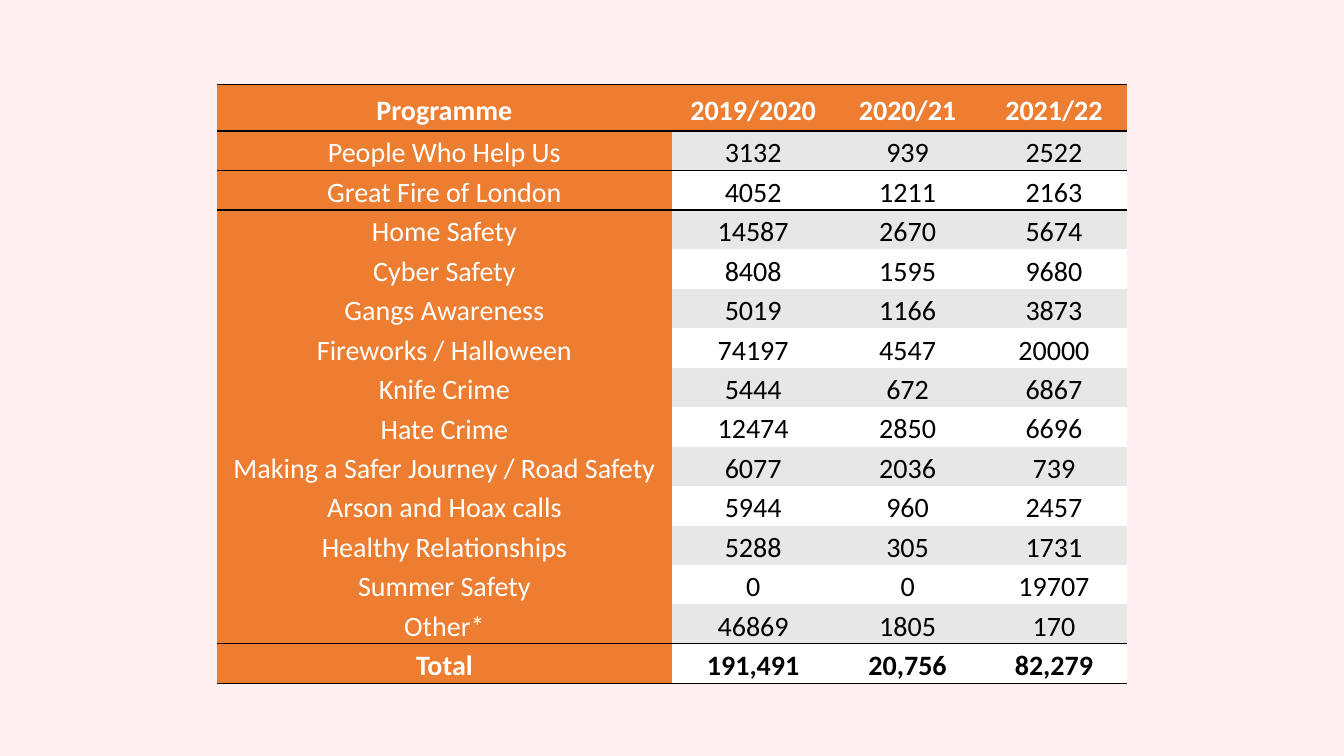
from lxml.etree import SubElement
from pptx import Presentation
from pptx.dml.color import RGBColor
from pptx.enum.text import MSO_ANCHOR as Anchor, PP_ALIGN as Align
from pptx.oxml.ns import qn
from pptx.util import Inches, Pt

ORANGE, GREY, WHITE, BLACK = "ED7D31", "E7E7E7", "FFFFFF", "000000"
BACKGROUND = "FFF0F0"
NO_STYLE = "{2D5ABB26-0587-4C30-8999-92F81FD0307C}"
COLUMN_WIDTHS = [4.51, 1.61, 1.45, 1.45]
HEADER_HEIGHT = 0.46
PROGRAMMES = [
    ("Programme", "2019/2020", "2020/21", "2021/22"),
    ("People Who Help Us", "3132", "939", "2522"),
    ("Great Fire of London", "4052", "1211", "2163"),
    ("Home Safety", "14587", "2670", "5674"),
    ("Cyber Safety", "8408", "1595", "9680"),
    ("Gangs Awareness", "5019", "1166", "3873"),
    ("Fireworks / Halloween", "74197", "4547", "20000"),
    ("Knife Crime", "5444", "672", "6867"),
    ("Hate Crime", "12474", "2850", "6696"),
    ("Making a Safer Journey / Road Safety", "6077", "2036", "739"),
    ("Arson and Hoax calls", "5944", "960", "2457"),
    ("Healthy Relationships", "5288", "305", "1731"),
    ("Summer Safety", "0", "0", "19707"),
    ("Other*", "46869", "1805", "170"),
    ("Total", "191,491", "20,756", "82,279"),
]
TOTAL_ROW = len(PROGRAMMES) - 1
RULED_ABOVE = {0, 1, 2, TOTAL_ROW}
RULED_BELOW = {0, 1, TOTAL_ROW - 1, TOTAL_ROW}


def paint(fill_or_color, value):
    fill_or_color.solid()
    fill_or_color.fore_color.rgb = RGBColor.from_string(value)


def rule_cell(cell, edge):
    properties = cell._tc.get_or_add_tcPr()
    line = SubElement(properties, qn(f"a:{edge}"), w=str(Pt(1)))
    fill = SubElement(line, qn("a:solidFill"))
    SubElement(fill, qn("a:srgbClr"), val=BLACK)


def fill_cell(cell, text, row, column):
    if row in RULED_ABOVE:
        rule_cell(cell, "lnT")
    if row in RULED_BELOW:
        rule_cell(cell, "lnB")
    is_label = row == 0 or column == 0
    paint(cell.fill, ORANGE if is_label else GREY if row % 2 else WHITE)
    cell.margin_left = cell.margin_right = Inches(0.07)
    cell.margin_top = cell.margin_bottom = 0
    if not is_label:
        cell.vertical_anchor = Anchor.TOP
    elif row >= TOTAL_ROW - 1:
        cell.vertical_anchor = Anchor.BOTTOM
    else:
        cell.vertical_anchor = Anchor.MIDDLE
    para = cell.text_frame.paragraphs[0]
    para.alignment = Align.CENTER
    para.line_spacing = 1.15
    span = para.add_run()
    span.text = text
    span.font.name = "Calibri"
    span.font.size = Pt(20)
    span.font.bold = row in (0, TOTAL_ROW)
    paint(span.font.fill, WHITE if is_label else BLACK)


def add_programme_table(page, left, top, width, height):
    frame = page.shapes.add_table(
        len(PROGRAMMES), len(COLUMN_WIDTHS),
        Inches(left), Inches(top), Inches(width), Inches(height))
    table = frame.table
    table.first_row = table.horz_banding = False
    table._tbl.tblPr.find(qn("a:tableStyleId")).text = NO_STYLE
    for column, share in zip(table.columns, COLUMN_WIDTHS):
        column.width = Inches(width * share / sum(COLUMN_WIDTHS))
    body_height = (height - HEADER_HEIGHT) / TOTAL_ROW
    for row, values in enumerate(PROGRAMMES):
        table.rows[row].height = Inches(body_height if row else HEADER_HEIGHT)
        for column, text in enumerate(values):
            fill_cell(table.cell(row, column), text, row, column)


def main():
    deck = Presentation()
    deck.slide_width, deck.slide_height = Inches(13.33), Inches(7.5)
    page = deck.slides.add_slide(deck.slide_layouts[6])
    paint(page.background.fill, BACKGROUND)
    add_programme_table(page, 2.15, 0.84, 9.03, 5.83)
    deck.save("out.pptx")


if __name__ == "__main__":
    main()
